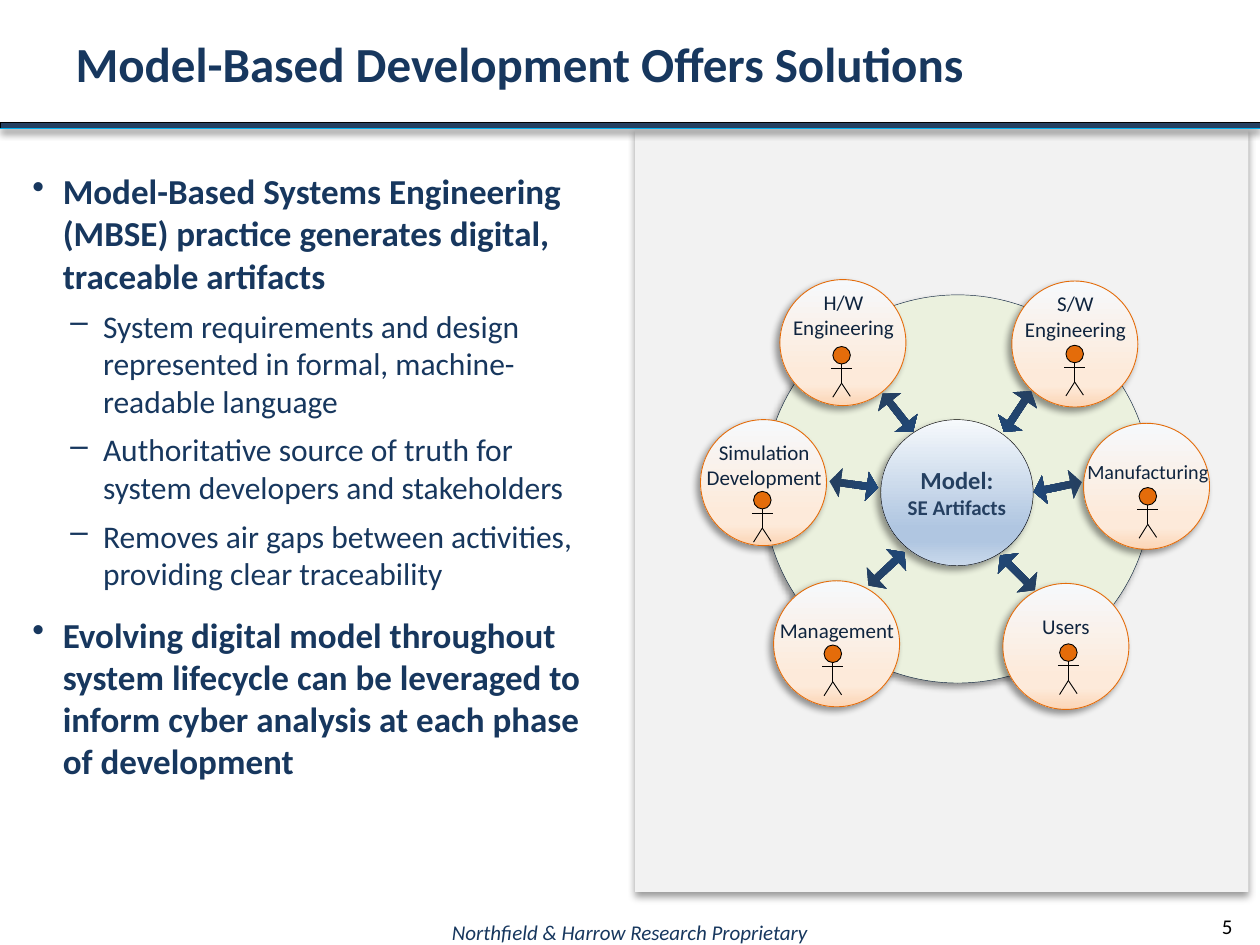
import pptx
import pptx.dml.color
import pptx.enum.shapes
import pptx.enum.text
import pptx.oxml
import pptx.oxml.ns
import pptx.oxml.xmlchemy
import pptx.util

Pt = pptx.util.Pt
SHAPE = pptx.enum.shapes.MSO_SHAPE
ALIGN = pptx.enum.text.PP_ALIGN
ANCHOR = pptx.enum.text.MSO_ANCHOR
FONT = "Calibri"

COLOURS = {
    "navy": "17375E", "bar": "254061", "cyan": "00B0F0", "panel": "F2F2F2",
    "ring": "EBF1DE", "dark": "0F243E", "orange": "E46C0A", "black": "000000",
}
GRADIENTS = {
    "role": [(0, "F6F9FC"), (74, "FDEADA"), (83, "FDEADA"), (100, "FCD5B5")],
    "model": [(0, "F6F9FC"), (74, "B0C6E1"), (83, "B0C6E1"), (100, "CAD9EB")],
    "arrow": [(0, "254061"), (17, "254061"), (100, "1F497D")],
}

BULLETS = [
    (0, "Model-Based Systems Engineering (MBSE) practice generates digital, "
        "traceable artifacts"),
    (1, "System requirements and design represented in formal, "
        "machine-readable language"),
    (1, "Authoritative source of truth for system developers and stakeholders"),
    (1, "Removes air gaps between activities, providing clear traceability"),
    (0, "Evolving digital model throughout system lifecycle can be leveraged to "
        "inform cyber analysis at each phase of development"),
]
# Per level: sign, left margin, hanging indent, space before, size, bold
LEVELS = [("•", 17.3, 17.3, 12, 20, True), ("–", 40.3, 18.7, 6, 18, False)]

# Label, size, alignment, circle corner, label corner and width, head corner
ROLES = [
    ("Management", 12, ALIGN.LEFT, (442.1, 331.9), (438.5, 349.2, 92.9), (470.9, 368.6)),
    ("Simulation\nDevelopment", 12, ALIGN.CENTER, (400.3, 239.8), (388.1, 247.7, 97.2),
     (430.6, 280.8)),
    ("H/W Engineering", 12, ALIGN.CENTER, (445.7, 159.8), (433.4, 162, 97.2), (475.9, 198)),
    ("S/W\nEngineering", 12, ALIGN.CENTER, (578.2, 160.6), (565.9, 162.7, 97.2),
     (609.1, 197.3)),
    ("Manufacturing", 11.5, ALIGN.LEFT, (619.2, 241.9), (614.2, 259.2, 92.9),
     (650.9, 278.6)),
    ("Users", 12, ALIGN.CENTER, (573.1, 333.4), (573.1, 347, 72), (605.5, 367.9)),
]
# Left, top, rotation
ARROWS = [
    (473.8, 268.6, 7.8), (499, 227.5, 51.7), (492.5, 316.8, 317.1),
    (567.4, 319, 225.1), (590.4, 270, 168.3), (567.4, 226.8, 123.4),
]


def colour(name):
    return pptx.dml.color.RGBColor.from_string(COLOURS[name])


def fill_gradient(shape, name, angle):
    """Replace the fill of a shape by a linear gradient."""
    shape.fill.background()
    stops = "".join(
        f'<a:gs pos="{pos * 1000}"><a:srgbClr val="{value}"/></a:gs>'
        for pos, value in GRADIENTS[name])
    gradient = pptx.oxml.parse_xml(
        f'<a:gradFill {pptx.oxml.ns.nsdecls("a")} rotWithShape="1">'
        f'<a:gsLst>{stops}</a:gsLst><a:lin ang="{angle * 60000}" scaled="0"/></a:gradFill>')
    properties = shape._element.spPr
    properties.replace(properties.find(pptx.oxml.ns.qn("a:noFill")), gradient)


def add_shadow(shape, angle):
    effects = shape._element.spPr.find(pptx.oxml.ns.qn("a:effectLst"))
    effects.append(pptx.oxml.parse_xml(
        f'<a:outerShdw {pptx.oxml.ns.nsdecls("a")} blurRad="{Pt(4)}" dist="{Pt(3)}" '
        f'dir="{angle * 60000}" rotWithShape="0"><a:srgbClr val="000000">'
        '<a:alpha val="40000"/></a:srgbClr></a:outerShdw>'))


def add_figure(parent, kind, place, fill=None, line=None, width=0.5, shadow=None):
    shape = parent.shapes.add_shape(kind, *map(Pt, place))
    shape.shadow.inherit = False
    if fill in GRADIENTS:
        fill_gradient(shape, fill, 0 if fill == "arrow" else 90)
    else:
        shape.fill.solid()
        shape.fill.fore_color.rgb = colour(fill)
    if line:
        shape.line.color.rgb = colour(line)
        shape.line.width = Pt(width)
    else:
        shape.line.fill.background()
    if shadow is not None:
        add_shadow(shape, shadow)
    return shape


def add_line(parent, start, end, name, width):
    line = parent.shapes.add_connector(
        pptx.enum.shapes.MSO_CONNECTOR.STRAIGHT, *map(Pt, start + end))
    line.line.color.rgb = colour(name)
    line.line.width = Pt(width)
    line._element.spPr.append(pptx.oxml.xmlchemy.OxmlElement("a:effectLst"))


def add_span(para, text, size, name, bold=False, italic=False):
    """Add a run for each line of the text, with line breaks between."""
    for index, piece in enumerate(text.split("\n")):
        if index:
            para.add_line_break()
        span = para.add_run()
        span.text = piece
        span.font.name = FONT
        span.font.size = Pt(size)
        span.font.bold = bold
        span.font.italic = italic
        span.font.color.rgb = colour(name)


def add_box(page, place):
    box = page.shapes.add_textbox(*map(Pt, place))
    box.text_frame.word_wrap = True
    return box.text_frame


def add_label(page, place, text, size, name, align=ALIGN.LEFT, italic=False):
    frame = add_box(page, place)
    para = frame.paragraphs[0]
    para.alignment = align
    add_span(para, text, size, name, italic=italic)
    return frame


def add_title(page, text):
    title = page.shapes.title
    title.left, title.top, title.width, title.height = map(Pt, (36, 7.9, 545.8, 56.2))
    title.text_frame.vertical_anchor = ANCHOR.MIDDLE
    para = title.text_frame.paragraphs[0]
    para.alignment = ALIGN.LEFT
    add_span(para, text, 28, "navy", bold=True)


def add_bullets(page):
    frame = add_box(page, (11.5, 93.6, 338.4, 360))
    for index, (level, text) in enumerate(BULLETS):
        sign, margin, hanging, before, size, bold = LEVELS[level]
        para = frame.add_paragraph() if index else frame.paragraphs[0]
        para.level = level
        properties = para._p.get_or_add_pPr()
        properties.set("marL", str(Pt(margin)))
        properties.set("indent", str(-Pt(hanging)))
        bullet = pptx.oxml.xmlchemy.OxmlElement("a:buChar")
        bullet.set("char", sign)
        properties.append(bullet)
        if index:
            para.space_before = Pt(before)
        add_span(para, text, size, "navy", bold=bold)


def add_person(page, left, top):
    """Draw a stick figure whose head has its corner at left, top."""
    person = page.shapes.add_group_shape()
    middle, hip = left + 5, top + 21
    add_figure(person, SHAPE.OVAL, (left, top, 10, 10), "orange", "black")
    for start, end in [
        ((middle, top + 10), (middle, hip)),
        ((middle - 6, top + 12.5), (middle + 6, top + 12.5)),
        ((middle, hip), (middle + 5, hip + 7.5)),
        ((middle, hip), (middle - 5, hip + 8)),
    ]:
        add_line(person, start, end, "black", 0.5)


def add_model(page):
    model = add_figure(page, SHAPE.OVAL, (503.3, 239.8, 87.1, 83.5), "model", "black",
                       0.25, shadow=135)
    frame = model.text_frame
    frame.margin_left = frame.margin_right = frame.margin_top = frame.margin_bottom = 0
    frame.vertical_anchor = ANCHOR.MIDDLE
    para = frame.paragraphs[0]
    para.alignment = ALIGN.CENTER
    add_span(para, "Model:", 14, "bar", bold=True)
    para.add_line_break()
    add_span(para, "SE Artifacts", 12, "bar", bold=True)


def main():
    deck = pptx.Presentation()
    deck.slide_width, deck.slide_height = Pt(720), Pt(540)
    page = deck.slides.add_slide(deck.slide_layouts.get_by_name("Title Only"))

    # Panel, header bar and title
    add_figure(page, SHAPE.RECTANGLE, (362.9, 73.4, 350.6, 436.3), "panel", shadow=90)
    add_figure(page, SHAPE.RECTANGLE, (0, 69.8, 720, 3.6), "bar", "black", 0.25, shadow=90)
    add_line(page, (0, 73.4), (720, 73.4), "cyan", 0.75)
    add_title(page, "Model-Based Development Offers Solutions")
    add_bullets(page)

    # Ring of roles around the model
    add_figure(page, SHAPE.OVAL, (436.3, 168.5, 221.8, 221.8), "ring", "dark", 0.25,
               shadow=135)
    for text, size, align, corner, (left, top, width), head in ROLES:
        add_figure(page, SHAPE.OVAL, corner + (72, 72), "role", "orange", shadow=135)
        add_label(page, (left, top, width, 21.6), text, size, "dark", align)
        add_person(page, *head)
    add_model(page)
    for left, top, angle in ARROWS:
        arrow = add_figure(page, SHAPE.LEFT_RIGHT_ARROW, (left, top, 28.1, 16.6), "arrow")
        arrow.adjustments[0], arrow.adjustments[1] = 0.25, 0.39
        arrow.rotation = angle

    # Footer and page number
    footer = add_label(page, (0, 525.6, 720, 14.4), "Northfield & Harrow Research Proprietary",
                       12, "navy", ALIGN.CENTER, italic=True)
    footer.margin_top = footer.margin_bottom = 0
    add_label(page, (691.2, 518.4, 28.8, 21.6), "5", 12, "black")

    deck.save("out.pptx")


if __name__ == "__main__":
    main()
